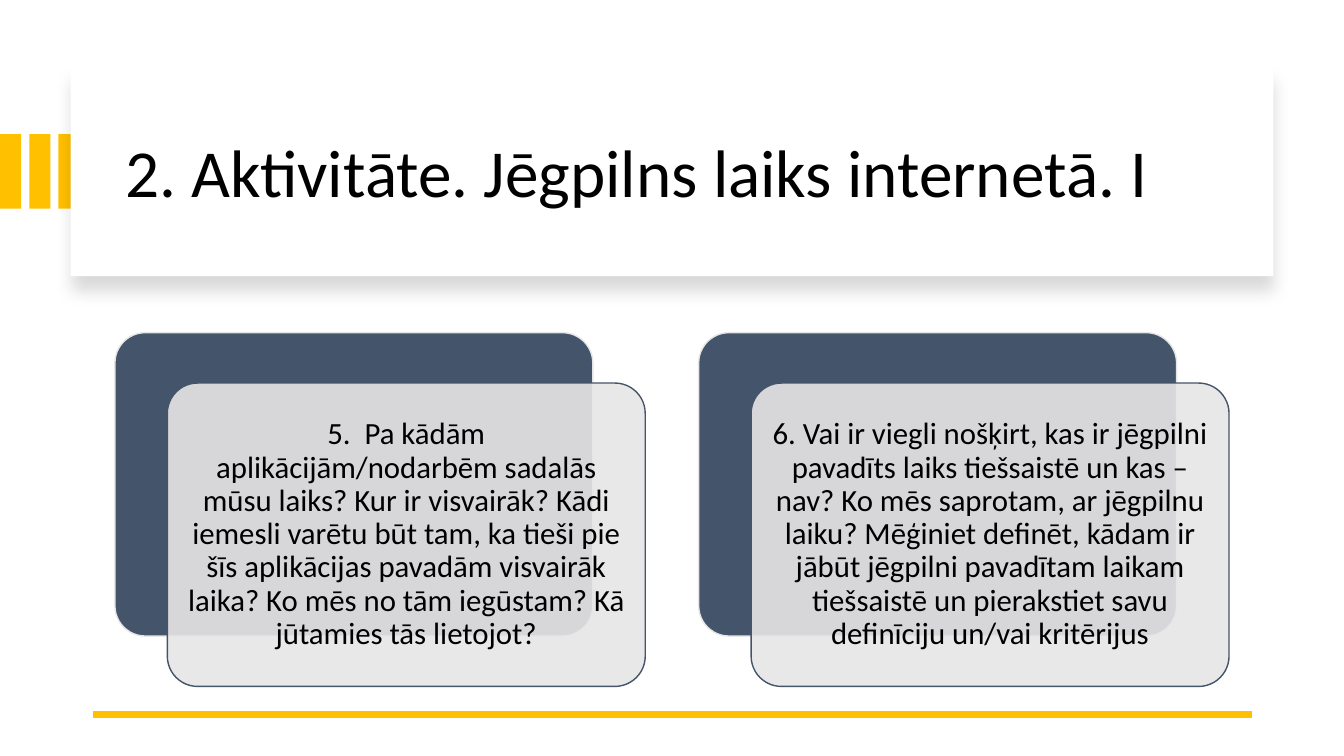
from dataclasses import dataclass

from lxml.etree import SubElement
from pptx import Presentation
from pptx.dml.color import RGBColor
from pptx.enum.shapes import MSO_CONNECTOR, MSO_SHAPE
from pptx.enum.text import MSO_ANCHOR, MSO_AUTO_SIZE, PP_ALIGN
from pptx.oxml.ns import qn
from pptx.util import Pt

EMU_PER_PX = 9144


@dataclass(frozen=True)
class Theme:
    font: str = "Calibri"
    ink: RGBColor = RGBColor(0x00, 0x00, 0x00)
    paper: RGBColor = RGBColor(0xFF, 0xFF, 0xFF)
    accent: RGBColor = RGBColor(0xFF, 0xC0, 0x00)
    slate: RGBColor = RGBColor(0x44, 0x54, 0x6A)
    mist: RGBColor = RGBColor(0xE7, 0xE6, 0xE6)
    title_size: int = 48
    card_size: int = 22
    line_spacing: float = 0.9


THEME = Theme()
HEADING = "2. Aktivitāte. Jēgpilns laiks internetā. I"
QUESTIONS = [
    "5.  Pa kādām aplikācijām/nodarbēm sadalās mūsu laiks? Kur ir visvairāk? "
    "Kādi iemesli varētu būt tam, ka tieši pie šīs aplikācijas pavadām visvairāk "
    "laika? Ko mēs no tām iegūstam? Kā jūtamies tās lietojot?",
    "6. Vai ir viegli nošķirt, kas ir jēgpilni pavadīts laiks tiešsaistē un kas – "
    "nav? Ko mēs saprotam, ar jēgpilnu laiku? Mēģiniet definēt, kādam ir jābūt "
    "jēgpilni pavadītam laikam tiešsaistē un pierakstiet savu definīciju un/vai "
    "kritērijus",
]


def px(length):
    return int(length * EMU_PER_PX)


def add_block(slide, kind, box, fill, line=None):
    block = slide.shapes.add_shape(kind, *map(px, box))
    block.shadow.inherit = False
    block.fill.solid()
    block.fill.fore_color.rgb = fill
    if line is None:
        block.line.fill.background()
    else:
        block.line.color.rgb = line
        block.line.width = Pt(1)
    return block


def add_soft_shadow(block):
    effects = block._element.spPr.find(qn("a:effectLst"))
    shadow = SubElement(effects, qn("a:outerShdw"), blurRad=str(Pt(11)),
                        dist=str(Pt(10)), dir="5400000", algn="t", rotWithShape="0")
    color = SubElement(shadow, qn("a:srgbClr"), val=str(THEME.ink))
    SubElement(color, qn("a:alpha"), val="15000")


def write(frame, text, size, align):
    frame.word_wrap = True
    frame.auto_size = MSO_AUTO_SIZE.NONE
    frame.vertical_anchor = MSO_ANCHOR.MIDDLE
    frame.text = text
    paragraph = frame.paragraphs[0]
    paragraph.alignment = align
    paragraph.line_spacing = THEME.line_spacing
    paragraph.font.name = THEME.font
    paragraph.font.size = Pt(size)
    paragraph.font.color.rgb = THEME.ink


def add_stripes(slide, box, count, pitch):
    left, top, width, height = box
    for index in range(count):
        add_block(slide, MSO_SHAPE.RECTANGLE,
                  (left + index * pitch, top, width, height), THEME.accent)


def add_header(slide, box):
    left, top, width, height = box
    panel = add_block(slide, MSO_SHAPE.RECTANGLE, box, THEME.paper)
    add_soft_shadow(panel)
    title = slide.shapes.title
    title.left, title.top = px(left + 44), px(top + 22)
    title.width, title.height = px(width - 80), px(height - 37)
    write(title.text_frame, HEADING, THEME.title_size, PP_ALIGN.LEFT)
    slide.shapes._spTree.append(title._element)


def add_rule(slide, left, right, y):
    rule = slide.shapes.add_connector(MSO_CONNECTOR.STRAIGHT,
                                      px(right), px(y), px(left), px(y))
    rule.line.color.rgb = THEME.accent
    rule.line.width = Pt(4.5)
    SubElement(rule._element.spPr, qn("a:effectLst"))


def add_question(slide, box, text):
    left, top, width, height = box
    back = add_block(slide, MSO_SHAPE.ROUNDED_RECTANGLE, box, THEME.slate, THEME.mist)
    card = add_block(slide, MSO_SHAPE.ROUNDED_RECTANGLE,
                     (left + 52, top + 50, width, height), THEME.mist, THEME.slate)
    for layer in (back, card):
        layer.adjustments[0] = 0.1
    color = card._element.spPr.find(qn("a:solidFill")).find(qn("a:srgbClr"))
    SubElement(color, qn("a:alpha"), val="90000")
    frame = card.text_frame
    frame.margin_left = frame.margin_right = px(9)
    frame.margin_top = frame.margin_bottom = px(9)
    write(frame, text, THEME.card_size, PP_ALIGN.CENTER)


def build_activity_slide(deck):
    slide = deck.slides.add_slide(deck.slide_layouts.get_by_name("Title Only"))
    slide.background.fill.solid()
    slide.background.fill.fore_color.rgb = THEME.paper
    add_stripes(slide, (0, 133, 21, 74), count=3, pitch=29)
    add_header(slide, (70, 67, 1193, 207))
    add_rule(slide, 92, 1242, 709)
    for index, question in enumerate(QUESTIONS):
        add_question(slide, (114 + index * 579, 330, 474, 301), question)


def main():
    deck = Presentation()
    deck.slide_width, deck.slide_height = px(1333), px(750)
    build_activity_slide(deck)
    deck.save("out.pptx")


if __name__ == "__main__":
    main()
